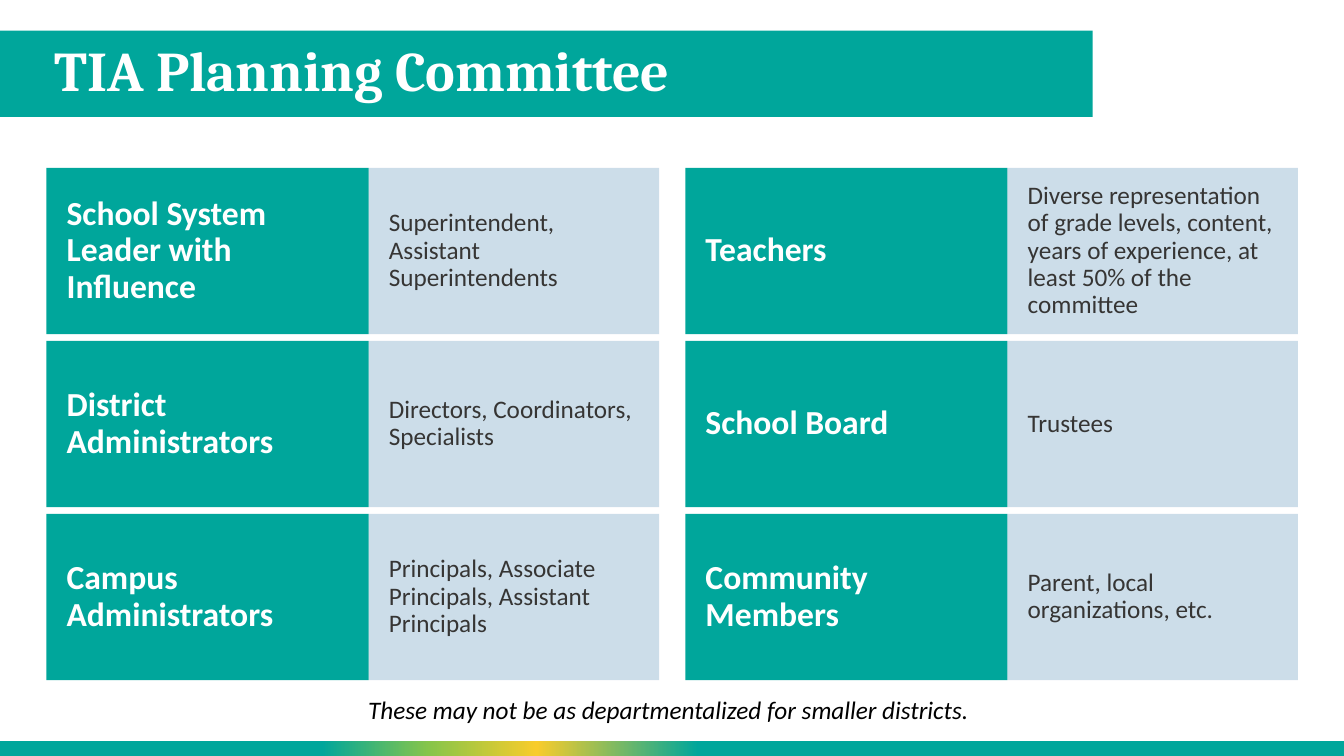
from dataclasses import dataclass

import lxml.etree
import pptx
import pptx.dml.color
import pptx.enum.shapes
import pptx.enum.text
import pptx.oxml.ns
import pptx.shapes.autoshape
import pptx.slide
import pptx.util

Cm = pptx.util.Cm
qn = pptx.oxml.ns.qn
Align = pptx.enum.text.PP_ALIGN
Shape = pptx.shapes.autoshape.Shape


@dataclass(frozen=True)
class Font:
    face: str
    size: int
    color: str
    bold: bool = False
    italic: bool = False


@dataclass(frozen=True)
class Theme:
    teal: str = "00A69B"
    blue: str = "015692"
    tint: int = 20
    # Stops run from right to left
    glow: tuple = ((0, "00A69B"), (48, "00A69B"), (60, "F8CC2B"),
                   (68, "87C54A"), (76, "00A69B"), (100, "00A69B"))
    title: Font = Font("Cambria", 40, "FFFFFF", bold=True)
    head: Font = Font("Calibri", 24, "FFFFFF", bold=True)
    body: Font = Font("Calibri", 18, "363534")
    note: Font = Font("Calibri", 18, "000000", italic=True)


@dataclass(frozen=True)
class Box:
    left: float
    top: float
    width: float
    height: float


@dataclass(frozen=True)
class Group:
    head: str
    body: str


THEME = Theme()
COLUMNS = (
    (Group("School System Leader with Influence", "Superintendent, Assistant Superintendents"),
     Group("District Administrators", "Directors, Coordinators, Specialists"),
     Group("Campus Administrators", "Principals, Associate Principals, Assistant Principals")),
    (Group("Teachers", "Diverse representation of grade levels, content, years of "
                       "experience, at least 50% of the committee"),
     Group("School Board", "Trustees"),
     Group("Community Members", "Parent, local organizations, etc.")),
)
LEFT, TOP = 1.17, 4.23
STEP_X, STEP_Y = 16.1, 4.36
HEAD_W, BODY_W, CELL_H = 8.12, 7.32, 4.19


def rgb(code: str) -> pptx.dml.color.RGBColor:
    return pptx.dml.color.RGBColor.from_string(code)


def place(shape: Shape, box: Box) -> None:
    shape.left, shape.top = Cm(box.left), Cm(box.top)
    shape.width, shape.height = Cm(box.width), Cm(box.height)


def write(shape: Shape, text: str, font: Font, inset: float = 0.25,
          align: Align = Align.LEFT, spacing: float = 0.9) -> None:
    frame = shape.text_frame
    frame.word_wrap = True
    frame.auto_size = pptx.enum.text.MSO_AUTO_SIZE.NONE
    frame.vertical_anchor = pptx.enum.text.MSO_ANCHOR.MIDDLE
    frame.margin_left = frame.margin_right = Cm(inset)
    frame.margin_top = frame.margin_bottom = Cm(0.13)
    para = frame.paragraphs[0]
    para.alignment = align
    para.line_spacing = spacing
    run = para.add_run()
    run.text = text
    run.font.name = font.face
    run.font.size = pptx.util.Pt(font.size)
    run.font.bold = font.bold
    run.font.italic = font.italic
    run.font.color.rgb = rgb(font.color)


def block(slide: pptx.slide.Slide, box: Box, color: str, alpha: int = 100) -> Shape:
    """Add a borderless rectangle; alpha is its opacity in percent."""
    shape = slide.shapes.add_shape(
        pptx.enum.shapes.MSO_SHAPE.RECTANGLE,
        Cm(box.left), Cm(box.top), Cm(box.width), Cm(box.height))
    shape.shadow.inherit = False
    shape.line.fill.background()
    shape.fill.solid()
    shape.fill.fore_color.rgb = rgb(color)
    if alpha < 100:
        tone = shape.element.spPr.find(qn("a:solidFill")).find(qn("a:srgbClr"))
        lxml.etree.SubElement(tone, qn("a:alpha"), val=str(alpha * 1000))
    return shape


def blend(shape: Shape, stops: tuple) -> None:
    """Fill a shape with a gradient from right to left."""
    shape.fill.gradient()
    shape.fill.gradient_angle = 180
    items = shape.element.spPr.find(qn("a:gradFill")).find(qn("a:gsLst"))
    for item in list(items):
        items.remove(item)
    for spot, color in stops:
        item = lxml.etree.SubElement(items, qn("a:gs"), pos=str(spot * 1000))
        lxml.etree.SubElement(item, qn("a:srgbClr"), val=color)


def header(slide: pptx.slide.Slide) -> None:
    block(slide, Box(-0.03, 0.77, 27.57, 2.18), THEME.teal)
    strip = block(slide, Box(-0.03, 18.67, 33.9, 0.38), THEME.teal)
    blend(strip, THEME.glow)
    title = slide.shapes.title
    place(title, Box(1.12, 0.77, 25.55, 2.18))
    write(title, "TIA Planning Committee", THEME.title)
    # Bring the title in front of its band
    slide.shapes.element.append(title.element)


def grid(slide: pptx.slide.Slide) -> None:
    for col, groups in enumerate(COLUMNS):
        left = LEFT + col * STEP_X
        for row, group in enumerate(groups):
            top = TOP + row * STEP_Y
            head = block(slide, Box(left, top, HEAD_W, CELL_H), THEME.teal)
            write(head, group.head, THEME.head, inset=0.51)
            body = block(slide, Box(left + HEAD_W, top, BODY_W, CELL_H),
                         THEME.blue, THEME.tint)
            write(body, group.body, THEME.body, inset=0.51)


def footer(slide: pptx.slide.Slide) -> None:
    note = slide.shapes.add_textbox(Cm(0.99), Cm(17.32), Cm(31.72), Cm(1.12))
    write(note, "These may not be as departmentalized for smaller districts.",
          THEME.note, align=Align.CENTER, spacing=1.0)


def main() -> None:
    deck = pptx.Presentation()
    deck.slide_width, deck.slide_height = Cm(33.87), Cm(19.05)
    slide = deck.slides.add_slide(deck.slide_layouts.get_by_name("Title Only"))
    header(slide)
    grid(slide)
    footer(slide)
    deck.save("out.pptx")


if __name__ == "__main__":
    main()
